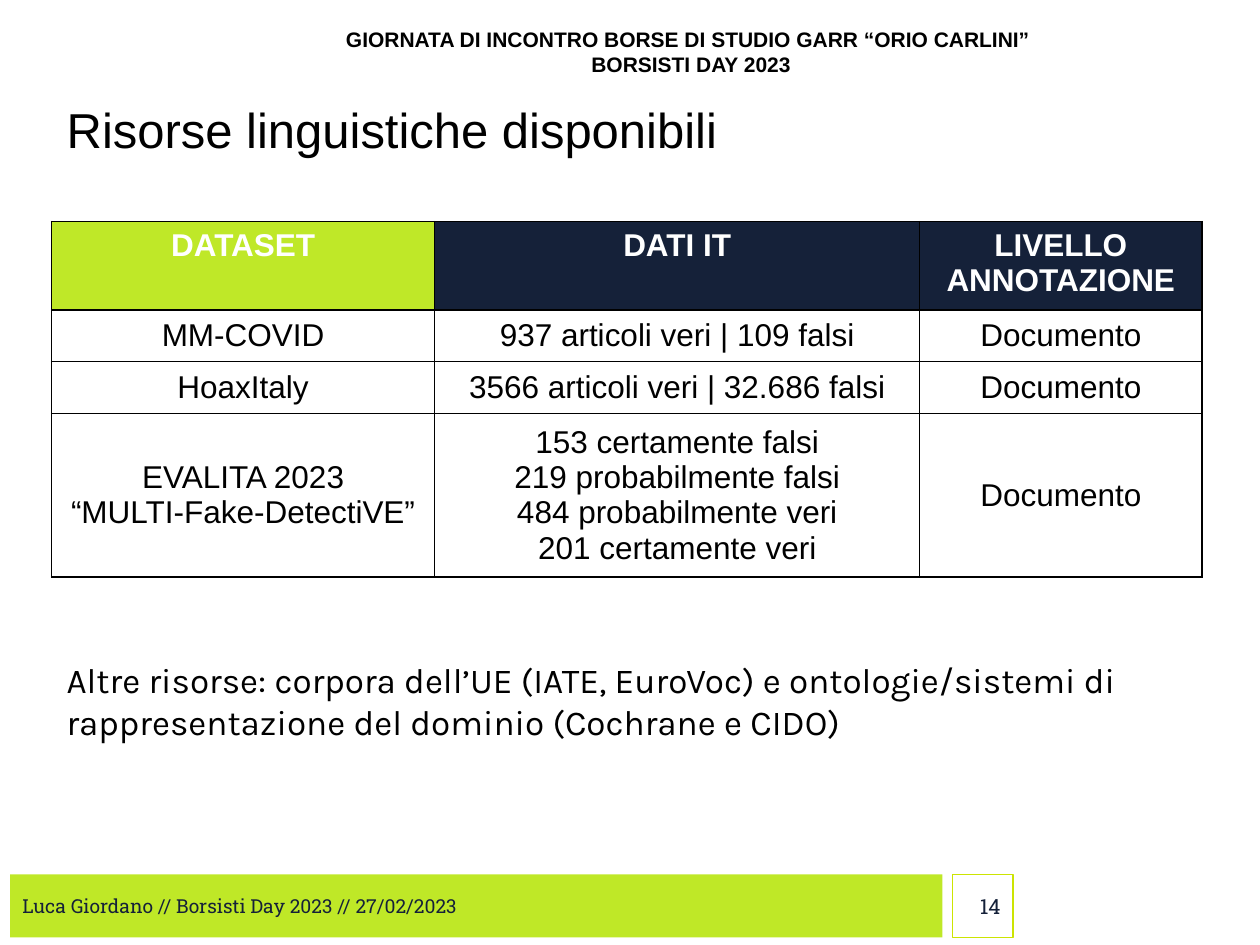
from lxml.etree import SubElement
from pptx import Presentation
from pptx.dml.color import RGBColor
from pptx.enum.shapes import MSO_SHAPE as Shape
from pptx.enum.text import MSO_ANCHOR as Anchor, PP_ALIGN as Align
from pptx.oxml import parse_xml
from pptx.oxml.ns import nsdecls, qn
from pptx.util import Inches, Pt

BLACK = RGBColor(0x00, 0x00, 0x00)
WHITE = RGBColor(0xFF, 0xFF, 0xFF)
NAVY = RGBColor(0x15, 0x21, 0x39)
LIME = RGBColor(0xBF, 0xE8, 0x28)
FOOTER_GREEN = RGBColor(0xB4, 0xE4, 0x02)
NUMBER_BORDER = RGBColor(0xCC, 0xE4, 0x02)

WIDTH, HEIGHT = Inches(10), Inches(7.5)
COLUMN, ROW = WIDTH // 100, HEIGHT // 75

TABLE_COLUMNS = (30.4, 38.5, 22.4)
TABLE_ROWS = (6.6, 4.1, 4.1, 12.2)
HEADER_FILLS = (LIME, NAVY, NAVY)
DATASETS = (
    ("DATASET", "DATI IT", "LIVELLO ANNOTAZIONE"),
    ("MM-COVID", "937 articoli veri | 109 falsi", "Documento"),
    ("HoaxItaly", "3566 articoli veri | 32.686 falsi", "Documento"),
    (
        "EVALITA 2023\n“MULTI-Fake-DetectiVE”",
        "153 certamente falsi\n219 probabilmente falsi\n"
        "484 probabilmente veri\n201 certamente veri",
        "Documento",
    ),
)


def grid(left, top, width, height):
    """Turn grid columns and rows into slide lengths."""
    return (
        round(left * COLUMN), round(top * ROW),
        round(width * COLUMN), round(height * ROW),
    )


def write(frame, text, size, font, color, bold=False, align=Align.LEFT):
    """Fill a text frame with one paragraph per line, all in one style."""
    frame.text = text
    for paragraph in frame.paragraphs:
        paragraph.alignment = align
        paragraph.font.size = Pt(size)
        paragraph.font.name = font
        paragraph.font.bold = bold
        paragraph.font.color.rgb = color


def add_text(slide, place, text, size, font, wrap=True, **style):
    """Add a text box with black text and return its frame."""
    frame = slide.shapes.add_textbox(*grid(*place)).text_frame
    frame.word_wrap = wrap
    write(frame, text, size, font, BLACK, **style)
    return frame


def add_title(slide, text):
    """Add the slide title with its wide left inset."""
    frame = add_text(slide, (-0.2, 8, 100, 5), text, 28, "Arial")
    frame.margin_left, frame.margin_right = Inches(0.55), Inches(0.39)
    frame.margin_top = frame.margin_bottom = Inches(0.04)
    frame.paragraphs[0].line_spacing = 0.9


def add_footer_box(slide, left, width, text, size, fill, border=None, align=Align.LEFT):
    """Add a filled rectangle with navy text to the footer row."""
    shape = slide.shapes.add_shape(Shape.RECTANGLE, *grid(left, 69.4, width, 5))
    shape.shadow.inherit = False
    shape.fill.solid()
    shape.fill.fore_color.rgb = fill
    if border is None:
        shape.line.fill.background()
    else:
        shape.line.color.rgb = border
        shape.line.width = Pt(0.75)
    shape.text_frame.word_wrap = True
    shape.text_frame.vertical_anchor = Anchor.MIDDLE
    write(shape.text_frame, text, size, "Roboto Slab", NAVY, align=align)
    return shape


def set_opacity(shape, percent):
    """Set the opacity of a shape's solid fill."""
    color = shape.fill._xPr.find(qn("a:solidFill"))[0]
    SubElement(color, qn("a:alpha"), val=str(percent * 1000))


def set_borders(cell):
    """Draw a thin black line on each side of a table cell."""
    properties = cell._tc.get_or_add_tcPr()
    for index, side in enumerate(("lnL", "lnR", "lnT", "lnB")):
        properties.insert(index, parse_xml(
            f'<a:{side} {nsdecls("a")} w="{Pt(1)}"><a:solidFill>'
            f'<a:srgbClr val="{BLACK}"/></a:solidFill></a:{side}>'
        ))


def add_dataset_table(slide):
    """Add the table of datasets with its coloured header."""
    place = grid(4.1, 17.6, sum(TABLE_COLUMNS), sum(TABLE_ROWS))
    table = slide.shapes.add_table(len(TABLE_ROWS), len(TABLE_COLUMNS), *place).table
    for column, width in zip(table.columns, TABLE_COLUMNS):
        column.width = round(width * COLUMN)
    for row_index, (row, height, texts) in enumerate(zip(table.rows, TABLE_ROWS, DATASETS)):
        row.height = round(height * ROW)
        header = row_index == 0
        for cell, text, header_fill in zip(row.cells, texts, HEADER_FILLS):
            cell.fill.solid()
            cell.fill.fore_color.rgb = header_fill if header else WHITE
            cell.vertical_anchor = Anchor.TOP if header else Anchor.MIDDLE
            write(cell.text_frame, text, 18, "Arial", WHITE if header else BLACK,
                  bold=header, align=Align.CENTER)
            set_borders(cell)


def main():
    """Build and save the slide."""
    presentation = Presentation()
    presentation.slide_width, presentation.slide_height = WIDTH, HEIGHT
    slide = presentation.slides.add_slide(presentation.slide_layouts[6])
    add_text(
        slide, (25.6, 1.6, 58.5, 5),
        "GIORNATA DI INCONTRO BORSE DI STUDIO GARR “ORIO CARLINI” \nBORSISTI DAY 2023",
        12, "Arial", wrap=False, bold=True, align=Align.CENTER,
    )
    add_title(slide, "Risorse linguistiche disponibili")
    footer = add_footer_box(
        slide, 0.8, 74, "Luca Giordano // Borsisti Day 2023 // 27/02/2023", 11, FOOTER_GREEN
    )
    set_opacity(footer, 85)
    add_footer_box(slide, 75.6, 4.8, "14", 12, WHITE, NUMBER_BORDER, Align.RIGHT)
    add_dataset_table(slide)
    add_text(
        slide, (4.3, 51.8, 91.3, 7.7),
        "Altre risorse: corpora dell’UE (IATE, EuroVoc) e ontologie/sistemi di "
        "rappresentazione del dominio (Cochrane e CIDO)",
        20, "Karla",
    )
    presentation.save("out.pptx")


if __name__ == "__main__":
    main()
